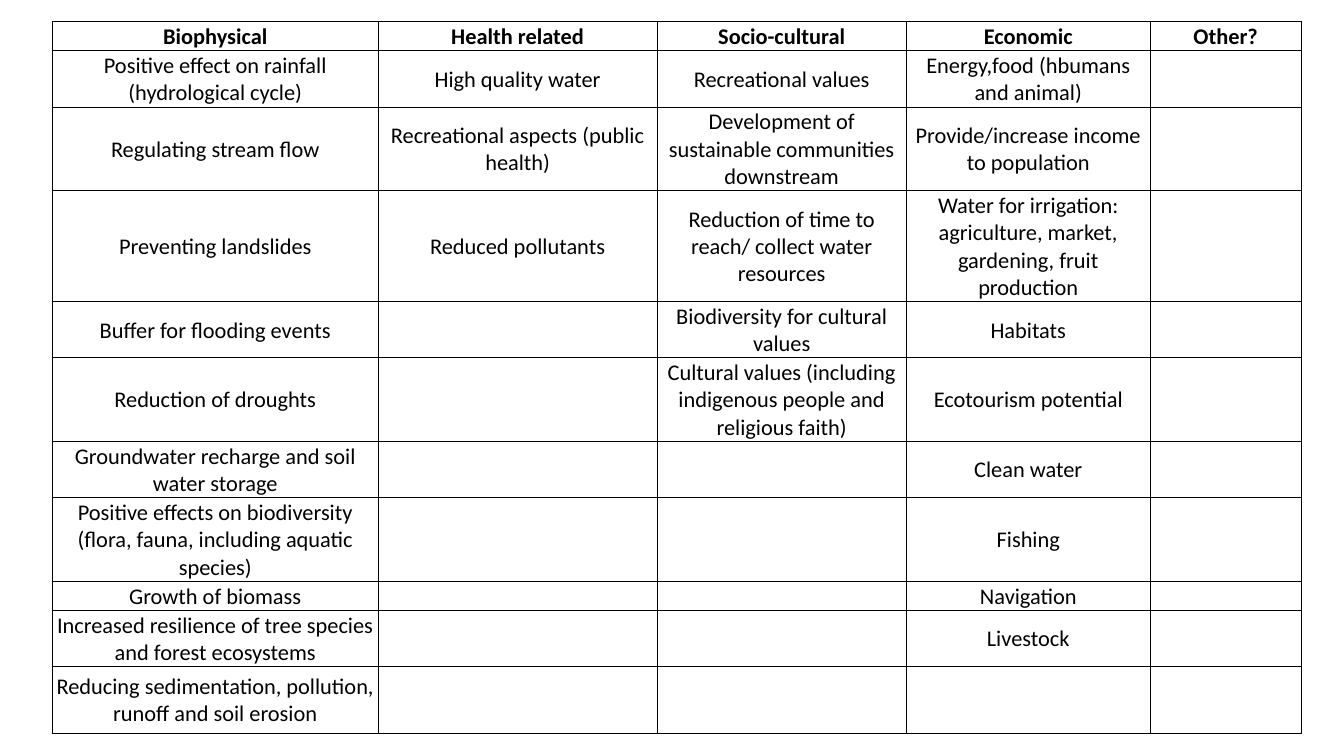
from lxml.etree import SubElement
from pptx import Presentation
from pptx.dml.color import RGBColor
from pptx.enum.text import MSO_ANCHOR, PP_ALIGN
from pptx.oxml.ns import qn
from pptx.util import Cm, Pt

BLACK = RGBColor(0, 0, 0)
SIZE = Pt(12)
FACE = "Calibri"
LINE = Cm(0.42)

deck = Presentation()
deck.slide_width = Cm(25.4)
deck.slide_height = Cm(14.28)
slide = deck.slides.add_slide(deck.slide_layouts[6])

widths = [6.16, 5.27, 4.71, 4.61, 2.85]
lines = [1, 2, 3, 4, 2, 3, 2, 3, 1, 2, 3]
groups = {
    "Biophysical": [
        "Positive effect on rainfall (hydrological cycle)",
        "Regulating stream flow",
        "Preventing landslides",
        "Buffer for flooding events",
        "Reduction of droughts",
        "Groundwater recharge and soil water storage",
        "Positive effects on biodiversity (flora, fauna, including aquatic species)",
        "Growth of biomass",
        "Increased resilience of tree species and forest ecosystems",
        "Reducing sedimentation, pollution, runoff and soil erosion",
    ],
    "Health related": [
        "High quality water",
        "Recreational aspects (public health)",
        "Reduced pollutants",
    ],
    "Socio-cultural": [
        "Recreational values",
        "Development of sustainable communities downstream",
        "Reduction of time to reach/ collect water resources",
        "Biodiversity for cultural values",
        "Cultural values (including indigenous people and religious faith)",
    ],
    "Economic": [
        "Energy,food (hbumans and animal)",
        "Provide/increase income to population",
        "Water for irrigation: agriculture, market, gardening, fruit production",
        "Habitats",
        "Ecotourism potential",
        "Clean water",
        "Fishing",
        "Navigation",
        "Livestock",
    ],
    "Other?": [],
}

frame = slide.shapes.add_table(
    len(lines), len(widths), Cm(0.99), Cm(0.41), Cm(sum(widths)), LINE * sum(lines)
)
table = frame.table
table.horz_banding = False
for column, width in zip(table.columns, widths):
    column.width = Cm(width)
for row, count in zip(table.rows, lines):
    row.height = LINE * count

layout = {
    "margin_left": Cm(0.03),
    "margin_right": Cm(0.03),
    "margin_top": Cm(0.03),
    "margin_bottom": Cm(0),
    "vertical_anchor": MSO_ANCHOR.MIDDLE,
}
style = {"name": FACE, "size": SIZE}

for col, (head, items) in enumerate(groups.items()):
    texts = [head] + items
    for row in range(len(lines)):
        cell = table.cell(row, col)
        for key, value in layout.items():
            setattr(cell, key, value)

        props = cell._tc.get_or_add_tcPr()
        for side in ("a:lnL", "a:lnR", "a:lnT", "a:lnB"):
            edge = SubElement(props, qn(side), w=str(Pt(0.5)))
            paint = SubElement(edge, qn("a:solidFill"))
            SubElement(paint, qn("a:srgbClr"), val=str(BLACK))
        cell.fill.background()

        para = cell.text_frame.paragraphs[0]
        para.alignment = PP_ALIGN.CENTER
        if row < len(texts):
            run = para.add_run()
            run.text = texts[row]
            for key, value in style.items():
                setattr(run.font, key, value)
            run.font.bold = row == 0
            run.font.color.rgb = BLACK
        else:
            end = SubElement(para._p, qn("a:endParaRPr"), sz=str(SIZE.centipoints))
            SubElement(end, qn("a:latin"), typeface=FACE)

deck.save("out.pptx")
